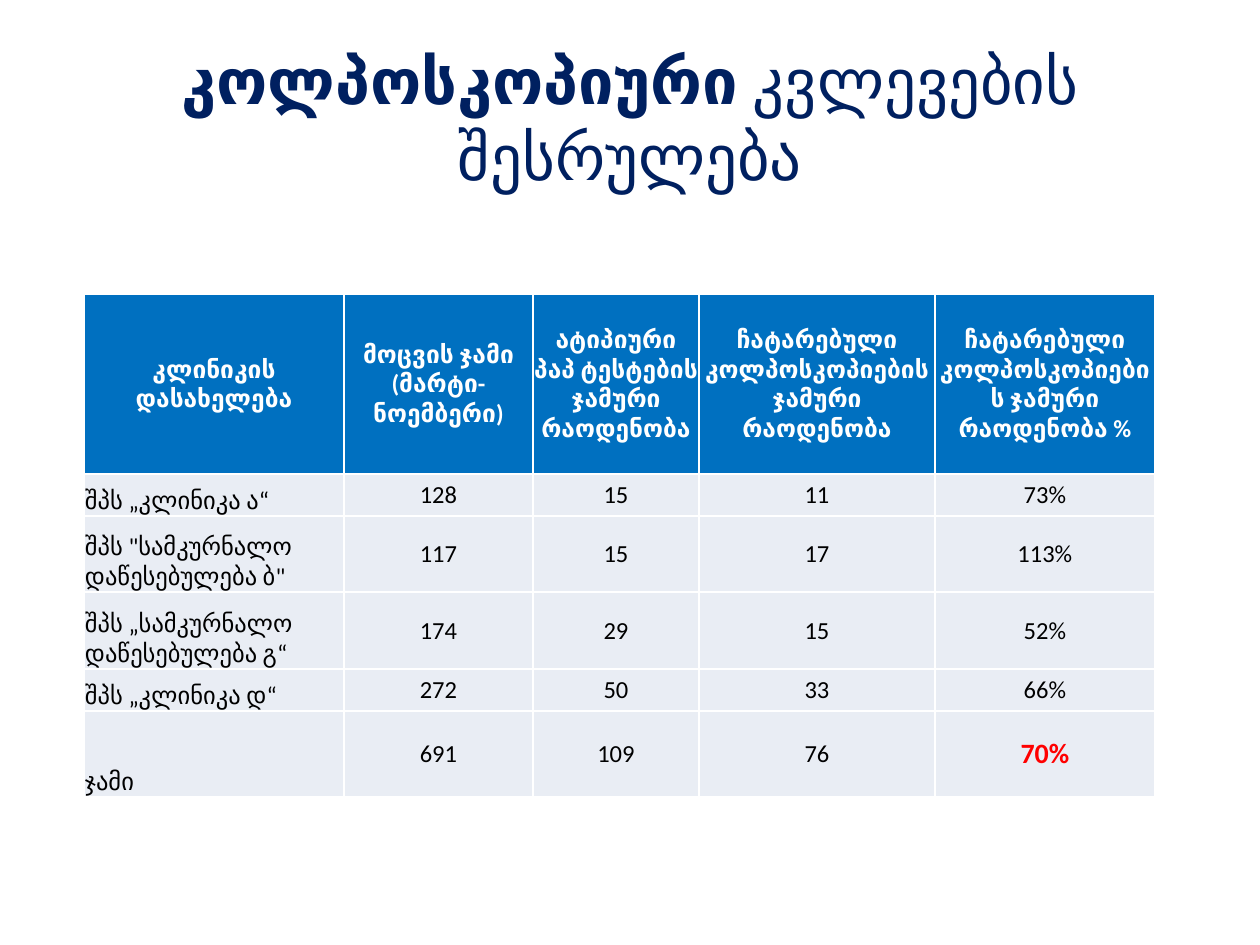
import dataclasses

import lxml.etree
import pptx
import pptx.dml.color
import pptx.enum.text
import pptx.oxml.ns
import pptx.util

ALIGN = pptx.enum.text.PP_ALIGN
ANCHOR = pptx.enum.text.MSO_ANCHOR


@dataclasses.dataclass(frozen=True)
class Theme:
    """Hold the font, colours and type sizes of the slide."""
    font: str = "Calibri"
    navy: str = "002060"
    head: str = "0070C0"
    body: str = "E9EDF4"
    white: str = "FFFFFF"
    black: str = "000000"
    red: str = "FF0000"
    title: int = 36
    text: int = 14
    total: int = 16


THEME = Theme()
SCALE = 914400 / 126
COLS = [260, 189, 166, 236, 220]
ROWS = [180, 42, 76, 77, 42, 86]
HEADS = [
    "კლინიკის დასახელება",
    "მოცვის ჯამი (მარტი-ნოემბერი)",
    "ატიპიური პაპ ტესტების ჯამური რაოდენობა",
    "ჩატარებული კოლპოსკოპიების ჯამური რაოდენობა",
    "ჩატარებული კოლპოსკოპიების ჯამური რაოდენობა %",
]
CLINICS = [
    ["შპს „კლინიკა ა“", "128", "15", "11", "73%"],
    ["შპს \"სამკურნალო დაწესებულება ბ\"", "117", "15", "17", "113%"],
    ["შპს „სამკურნალო დაწესებულება გ“", "174", "29", "15", "52%"],
    ["შპს „კლინიკა დ“", "272", "50", "33", "66%"],
    ["ჯამი", "691", "109", "76", "70%"],
]


def px(count):
    """Turn whole pixels into EMU."""
    return pptx.util.Emu(round(count * SCALE))


def rgb(code):
    """Turn a hex code into a colour."""
    return pptx.dml.color.RGBColor.from_string(code)


def add_run(para, text, size, color, bold=False):
    """Add one styled run to a paragraph."""
    run = para.add_run()
    run.text = text
    run.font.name = THEME.font
    run.font.size = pptx.util.Pt(size)
    run.font.bold = bold
    run.font.color.rgb = rgb(color)


def add_title(slide):
    """Add the centred two-weight title."""
    box = slide.shapes.add_textbox(px(63), px(38), px(1134), px(158))
    frame = box.text_frame
    frame.word_wrap = True
    frame.vertical_anchor = ANCHOR.MIDDLE
    para = frame.paragraphs[0]
    para.alignment = ALIGN.CENTER
    add_run(para, "კოლპოსკოპიური", THEME.title, THEME.navy, True)
    add_run(para, " კვლევების შესრულება", THEME.title, THEME.navy)


def add_edges(cell):
    """Draw a thin white line on each side of a cell."""
    props = cell._tc.get_or_add_tcPr()
    qn = pptx.oxml.ns.qn
    for side in ("lnL", "lnR", "lnT", "lnB"):
        line = lxml.etree.SubElement(props, qn(f"a:{side}"), w=str(pptx.util.Pt(1)))
        fill = lxml.etree.SubElement(line, qn("a:solidFill"))
        lxml.etree.SubElement(fill, qn("a:srgbClr"), val=THEME.white)


def fill_cell(cell, text, fill, size, color, bold=False, name=False):
    """Write and style one cell, with clinic names at the bottom left."""
    add_edges(cell)
    cell.fill.solid()
    cell.fill.fore_color.rgb = rgb(fill)
    cell.margin_left = cell.margin_right = cell.margin_top = px(1)
    cell.margin_bottom = 0
    cell.vertical_anchor = ANCHOR.BOTTOM if name else ANCHOR.MIDDLE
    para = cell.text_frame.paragraphs[0]
    para.alignment = ALIGN.LEFT if name else ALIGN.CENTER
    add_run(para, text, size, color, bold)


def add_grid(slide):
    """Add the table of clinics and their results."""
    frame = slide.shapes.add_table(
        len(ROWS), len(COLS), px(84), px(294), px(sum(COLS)), px(sum(ROWS)))
    table = frame.table
    table.first_row = table.horz_banding = False
    for col, width in zip(table.columns, COLS):
        col.width = px(width)
    for row, height in zip(table.rows, ROWS):
        row.height = px(height)
    for col, text in enumerate(HEADS):
        fill_cell(table.cell(0, col), text, THEME.head, THEME.text, THEME.white, True)
    last = (len(CLINICS), len(COLS) - 1)
    for row, values in enumerate(CLINICS, 1):
        for col, text in enumerate(values):
            total = (row, col) == last
            size = THEME.total if total else THEME.text
            color = THEME.red if total else THEME.black
            fill_cell(table.cell(row, col), text, THEME.body, size, color,
                      total, col == 0)


def main():
    """Build and save the slide."""
    deck = pptx.Presentation()
    deck.slide_width, deck.slide_height = px(1260), px(945)
    slide = deck.slides.add_slide(deck.slide_layouts[6])
    add_title(slide)
    add_grid(slide)
    deck.save("out.pptx")


if __name__ == "__main__":
    main()
